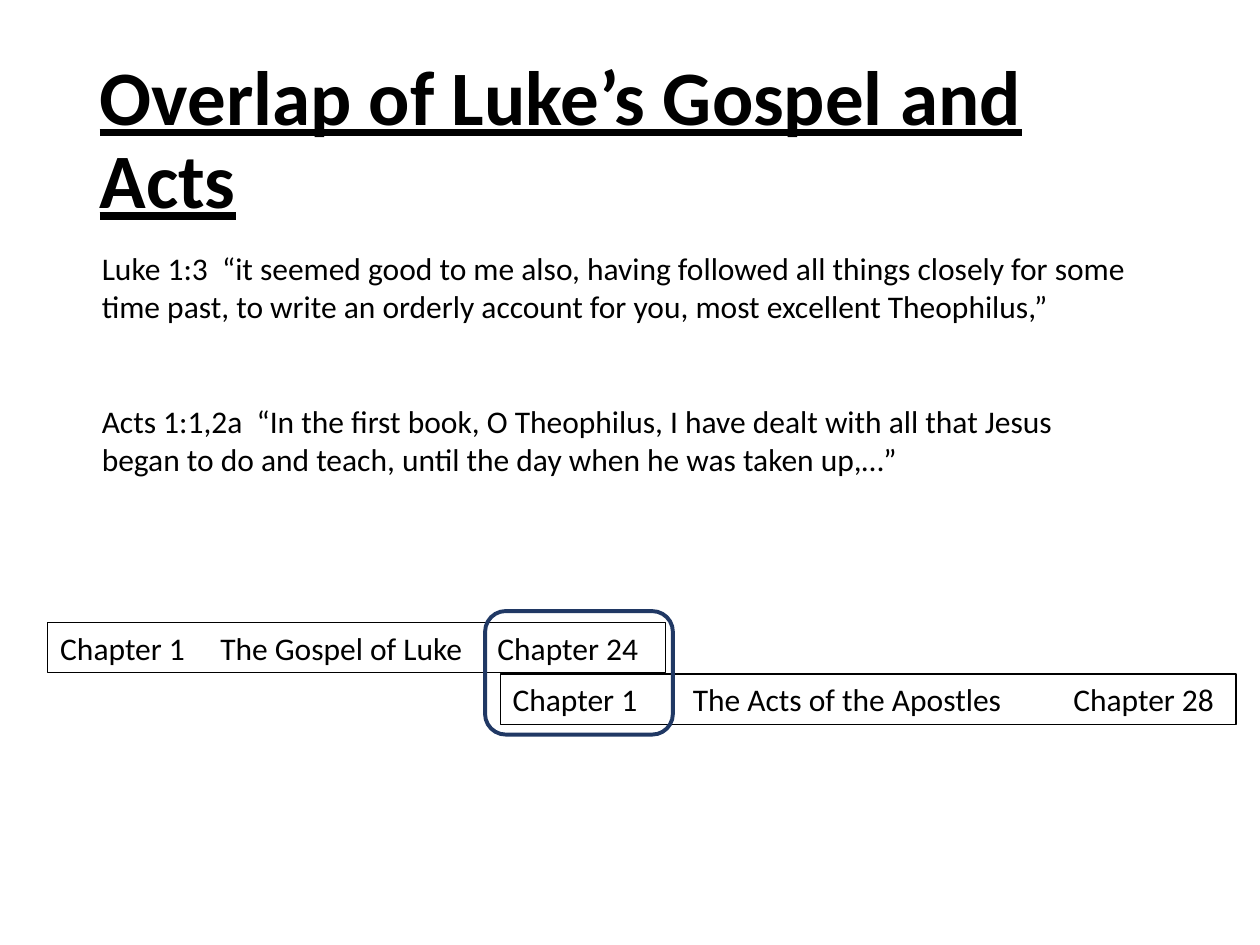
from lxml import etree
from pptx import Presentation
from pptx.dml.color import RGBColor
from pptx.enum.shapes import MSO_SHAPE
from pptx.enum.text import MSO_ANCHOR, MSO_AUTO_SIZE, PP_ALIGN
from pptx.oxml.ns import qn
from pptx.util import Inches, Pt

BLACK = RGBColor(0, 0, 0)
NAVY = RGBColor(0x20, 0x38, 0x64)
FONT = "Calibri"
RECT, ROUND = MSO_SHAPE.RECTANGLE, MSO_SHAPE.ROUNDED_RECTANGLE
LEFT = PP_ALIGN.LEFT
TOP, MIDDLE = MSO_ANCHOR.TOP, MSO_ANCHOR.MIDDLE
NO_FIT, GROW = MSO_AUTO_SIZE.NONE, MSO_AUTO_SIZE.SHAPE_TO_FIT_TEXT

VERSES = [
    (1.93, 8.5, "Luke 1:3  “it seemed good to me also, having followed all things "
     "closely for some time past, to write an orderly account for you, most "
     "excellent Theophilus,”"),
    (3.14, 7.87, "Acts 1:1,2a  “In the first book, O Theophilus, I have dealt with "
     "all that Jesus began to do and teach, until the day when he was taken up,…”"),
]
# Place of each book bar, its labels, and the tab stops of the later labels
BOOKS = [
    ((0.38, 4.94, 4.9, 0.4),
     ("Chapter 1", "The Gospel of Luke", "Chapter 24"), (1.27, 3.47)),
    ((3.97, 5.35, 5.84, 0.4),
     ("Chapter 1", "The Acts of the Apostles", "Chapter 28"), (1.43, 4.45)),
]


def put_text(shape, text, size=18, bold=False, underline=False,
             anchor=TOP, fit=GROW, spacing=1.0):
    frame = shape.text_frame
    frame.word_wrap = True
    frame.auto_size = fit
    frame.vertical_anchor = anchor
    para = frame.paragraphs[0]
    para.alignment = LEFT
    para.line_spacing = spacing
    run = para.add_run()
    run.text = text
    font = run.font
    font.name, font.size = FONT, Pt(size)
    font.bold, font.underline = bold, underline
    font.color.rgb = BLACK
    return para


def set_tabs(para, stops):
    tabs = etree.SubElement(para._p.get_or_add_pPr(), qn("a:tabLst"))
    for stop in stops:
        etree.SubElement(tabs, qn("a:tab"), pos=str(Inches(stop)), algn="l")


def add_frame(slide, kind, place, color, width):
    """Add an unfilled shape with an outline."""
    shape = slide.shapes.add_shape(kind, *map(Inches, place))
    shape.shadow.inherit = False
    shape.fill.background()
    shape.line.color.rgb = color
    shape.line.width = Pt(width)
    return shape


def add_title(slide, text):
    title = slide.shapes.title
    title.left, title.top = Inches(0.69), Inches(0.4)
    title.width, title.height = Inches(8.62), Inches(1.45)
    put_text(title, text, size=44, bold=True, underline=True,
             anchor=MIDDLE, fit=NO_FIT, spacing=0.9)


def add_book(slide, place, labels, stops):
    bar = add_frame(slide, RECT, place, BLACK, 0.75)
    set_tabs(put_text(bar, "\t".join(labels)), stops)


def add_verse(slide, top, width, text):
    box = slide.shapes.add_textbox(
        Inches(0.71), Inches(top), Inches(width), Inches(0.71))
    put_text(box, text)


def main():
    deck = Presentation()
    deck.slide_width, deck.slide_height = Inches(10), Inches(7.5)
    slide = deck.slides.add_slide(deck.slide_layouts[5])
    add_title(slide, "Overlap of Luke’s Gospel and Acts")
    for book in BOOKS:
        add_book(slide, *book)
    add_frame(slide, ROUND, (3.85, 4.85, 1.49, 0.98), NAVY, 2.25)
    for verse in VERSES:
        add_verse(slide, *verse)
    deck.save("out.pptx")


if __name__ == "__main__":
    main()
